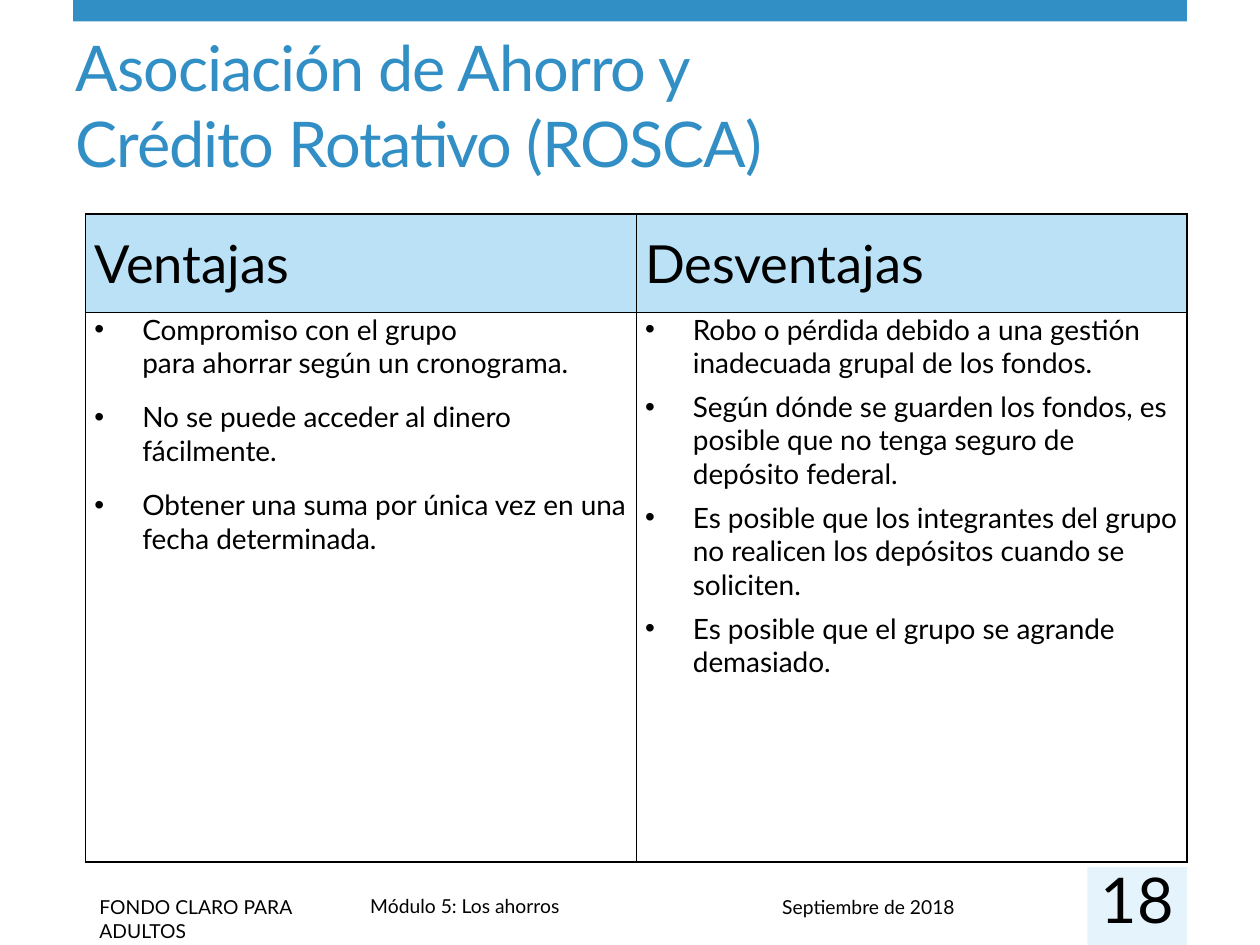
from pptx import Presentation, util as u
from pptx.dml.color import RGBColor
from pptx.enum import shapes, text
from pptx.oxml import ns
from lxml import etree

# Slide grid: 100 columns by 75 rows
COLUMNS, ROWS = 100, 75
FONT = "Lato"
BLACK, BLUE, SKY, PALE = "000000", "318FC5", "76C5EF", "E4F3FC"

HEADINGS = ["Ventajas", "Desventajas"]
# Each list: space after its items, then the items
LISTS = [
    (12, ["Compromiso con el grupo \vpara ahorrar según un cronograma.",
          "No se puede acceder al dinero fácilmente.",
          "Obtener una suma por única vez en una fecha determinada."]),
    (6, ["Robo o pérdida debido a una gestión inadecuada grupal de los fondos.",
         "Según dónde se guarden los fondos, es posible que no tenga seguro de depósito federal.",
         "Es posible que los integrantes del grupo no realicen los depósitos cuando se soliciten.",
         "Es posible que el grupo se agrande demasiado."]),
]
FOOTERS = [
    ("FONDO CLARO PARA ADULTOS", (6.9, 70.6, 20.9, 2.9)),
    ("Módulo\u00a05: Los ahorros".replace("\u00a0", " "), (28.4, 70.5, 30, 2.9)),
    ("Septiembre de 2018", (61.1, 70.6, 25.2, 2.9)),
]


def colour(value):
    return RGBColor.from_string(value)


def place(deck, box):
    """Turn grid columns and rows into slide lengths."""
    column, row = deck.slide_width / COLUMNS, deck.slide_height / ROWS
    left, top, width, height = box
    return (u.Emu(round(left * column)), u.Emu(round(top * row)),
            u.Emu(round(width * column)), u.Emu(round(height * row)))


def write(para, words, size, tone=BLACK):
    """Add words as runs, with a line break at each vertical tab."""
    for index, line in enumerate(words.split("\v")):
        if index:
            para.add_line_break()
        span = para.add_run()
        span.text = line
        span.font.name = FONT
        span.font.size = u.Pt(size)
        span.font.color.rgb = colour(tone)


def add_block(deck, page, box, fill):
    block = page.shapes.add_shape(shapes.MSO_SHAPE.RECTANGLE, *place(deck, box))
    block.shadow.inherit = False
    block.fill.solid()
    block.fill.fore_color.rgb = colour(fill)
    block.line.fill.background()


def add_label(deck, page, box, words, size):
    label = page.shapes.add_textbox(*place(deck, box))
    label.text_frame.word_wrap = True
    write(label.text_frame.paragraphs[0], words, size)
    return label.text_frame


def add_title(deck, page, box):
    title = page.shapes.title
    title.left, title.top, title.width, title.height = place(deck, box)
    frame = title.text_frame
    frame.auto_size = text.MSO_AUTO_SIZE.NONE
    frame.vertical_anchor = text.MSO_ANCHOR.BOTTOM
    para = frame.paragraphs[0]
    para.alignment = text.PP_ALIGN.LEFT
    write(para, "Asociación de Ahorro y \vCrédito Rotativo (ROSCA)", 36, BLUE)
    for span in para.runs:
        span.font._element.set("spc", "-60")


def add_bullet(para):
    """Hang the paragraph from a bullet."""
    properties = para._p.get_or_add_pPr()
    properties.set("marL", str(u.Inches(0.38)))
    properties.set("indent", str(-u.Inches(0.38)))
    etree.SubElement(properties, ns.qn("a:buFont"), typeface="Arial")
    etree.SubElement(properties, ns.qn("a:buChar"), char="•")
    tabs = etree.SubElement(properties, ns.qn("a:tabLst"))
    etree.SubElement(tabs, ns.qn("a:tab"), pos=str(u.Inches(0.5)), algn="l")


def format_cell(cell, fill=None):
    """Set margins, black one-point borders and a half-clear fill."""
    cell.margin_left = cell.margin_right = u.Inches(0.07)
    cell.margin_top = cell.margin_bottom = 0
    properties = cell._tc.get_or_add_tcPr()
    for side in ("a:lnL", "a:lnR", "a:lnT", "a:lnB"):
        line = etree.SubElement(properties, ns.qn(side), w=str(u.Pt(1)))
        solid = etree.SubElement(line, ns.qn("a:solidFill"))
        etree.SubElement(solid, ns.qn("a:srgbClr"), val=BLACK)
    if fill is None:
        cell.fill.background()
        return
    cell.fill.solid()
    cell.fill.fore_color.rgb = colour(fill)
    tone = properties.find(ns.qn("a:solidFill")).find(ns.qn("a:srgbClr"))
    etree.SubElement(tone, ns.qn("a:alpha"), val="50000")


def add_comparison(deck, page, box):
    left, top, width, height = place(deck, box)
    table = page.shapes.add_table(2, len(HEADINGS), left, top, width, height).table
    table.horz_banding = False
    table.rows[0].height = u.Inches(0.78)
    table.rows[1].height = height - table.rows[0].height
    for index, (heading, (gap, items)) in enumerate(zip(HEADINGS, LISTS)):
        # Heading cell
        head = table.cell(0, index)
        format_cell(head, SKY)
        head.vertical_anchor = text.MSO_ANCHOR.MIDDLE
        para = head.text_frame.paragraphs[0]
        para.space_after = u.Pt(12)
        write(para, heading, 30)
        # Bulleted cell
        body = table.cell(1, index)
        format_cell(body)
        for number, item in enumerate(items):
            frame = body.text_frame
            para = frame.add_paragraph() if number else frame.paragraphs[0]
            add_bullet(para)
            para.space_after = u.Pt(gap)
            write(para, item, 16)


def add_footer(deck, page):
    for words, box in FOOTERS:
        add_label(deck, page, box, words, 11)


def add_page_number(deck, page, box):
    left, top, width, height = box
    add_block(deck, page, box, PALE)
    frame = add_label(deck, page, (left, top - 0.5, width, 4.5), "18", 36)
    frame.margin_left = frame.margin_right = 0
    frame.margin_top = frame.margin_bottom = 0
    frame.paragraphs[0].alignment = text.PP_ALIGN.CENTER


def main():
    deck = Presentation()
    deck.slide_width, deck.slide_height = u.Inches(10), u.Inches(7.5)
    page = deck.slides.add_slide(deck.slide_layouts.get_by_name("Title Only"))
    add_block(deck, page, (5.8, 0, 88.4, 1.7), BLUE)
    add_title(deck, page, (5, 2.5, 91.8, 12.3))
    add_comparison(deck, page, (6.8, 17, 87.4, 51.4))
    add_footer(deck, page)
    add_page_number(deck, page, (86.3, 68.8, 7.9, 6.2))
    deck.save("out.pptx")


if __name__ == "__main__":
    main()
